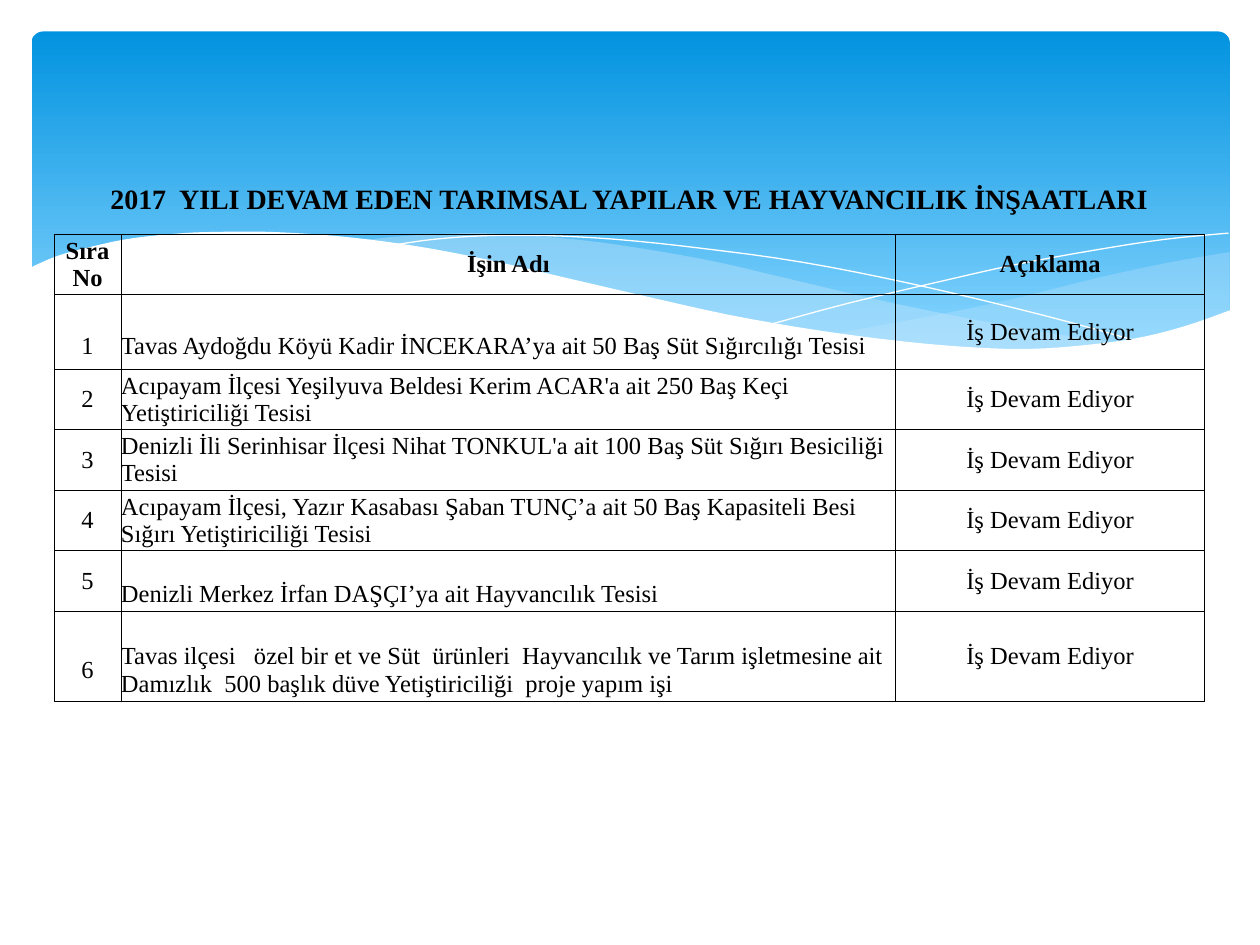
from pptx import Presentation
from pptx.dml.color import RGBColor
from pptx.enum.shapes import MSO_SHAPE
from pptx.enum.text import MSO_ANCHOR, PP_ALIGN
from pptx.oxml.ns import qn
from pptx.util import Inches, Pt
from lxml.etree import SubElement

COLORS = {"top": "0293E0", "bottom": "83D3FE", "haze": "C6E7FC",
          "white": "FFFFFF", "black": "000000"}
FONT = "Times New Roman"
LINE_HEIGHT = 0.22

TITLE = "2017  YILI DEVAM EDEN TARIMSAL YAPILAR VE HAYVANCILIK İNŞAATLARI"
HEADERS = ["Sıra No", "İşin Adı", "Açıklama"]
STATUS = "İş Devam Ediyor"
PROJECTS = [
    "Tavas Aydoğdu Köyü Kadir İNCEKARA’ya ait 50 Baş Süt Sığırcılığı Tesisi",
    "Acıpayam İlçesi Yeşilyuva Beldesi Kerim ACAR'a ait 250 Baş Keçi Yetiştiriciliği Tesisi",
    "Denizli İli Serinhisar İlçesi Nihat TONKUL'a ait 100 Baş Süt Sığırı Besiciliği Tesisi",
    "Acıpayam İlçesi, Yazır Kasabası Şaban TUNÇ’a ait 50 Baş Kapasiteli Besi Sığırı Yetiştiriciliği Tesisi",
    "Denizli Merkez İrfan DAŞÇI’ya ait Hayvancılık Tesisi",
    "Tavas ilçesi   özel bir et ve Süt  ürünleri  Hayvancılık ve Tarım işletmesine "
    "ait Damızlık  500 başlık düve Yetiştiriciliği  proje yapım işi",
]
LOWERED = {(2, 0), (2, 1), (6, 1), (7, 0), (7, 1)}
COL_WIDTHS = [0.53, 6.15, 2.45]
ROW_HEIGHTS = [0.55, 0.48, 0.59, 0.48, 0.48, 0.48, 0.48, 0.72]

RIGHT_HAZE = [
    [(9.76, 2), (9.35, 2.07), (8.91, 2.16), (8.61, 2.23), (8.05, 2.37),
     (7.53, 2.48), (7.06, 2.57), (6.61, 2.65)],
    [(6.61, 2.65), (7.05, 2.71), (7.45, 2.75), (7.81, 2.77), (8.14, 2.78),
     (8.54, 2.76), (8.89, 2.72), (9.21, 2.65), (9.49, 2.57), (9.76, 2.47)],
]
LEFT_HAZE = [
    [(8.93, 2.73), (8.37, 2.65), (7.75, 2.54), (7.06, 2.4), (6.29, 2.22),
     (5.69, 2.08), (5.14, 1.98), (4.65, 1.91), (4.2, 1.87), (3.8, 1.85),
     (3.44, 1.86), (3.13, 1.88), (2.86, 1.91)],
    [(2.86, 1.91), (3.42, 1.99), (4.04, 2.11), (4.49, 2.22), (5.3, 2.4),
     (6.01, 2.55), (6.65, 2.66), (7.22, 2.74), (7.73, 2.77), (8.18, 2.78),
     (8.57, 2.77), (8.93, 2.73)],
]
FALLING_LINE = [[
    (3.09, 1.95), (3.44, 1.9), (3.87, 1.87), (4.33, 1.87), (4.89, 1.9),
    (5.56, 1.97), (6.36, 2.08), (7.27, 2.26), (8.31, 2.51), (9.07, 2.72)]]
RISING_LINE = [[
    (6.13, 2.57), (6.72, 2.41), (7.48, 2.23), (8.06, 2.1), (8.66, 1.99),
    (9.24, 1.9), (9.75, 1.85)]]
WHITE_WAVE = [
    [(9.77, 2.46), (9.4, 2.59), (8.99, 2.69), (8.5, 2.75), (8.09, 2.77),
     (7.61, 2.75), (7.08, 2.7), (6.48, 2.62), (5.79, 2.5), (5.03, 2.33),
     (4.47, 2.2), (3.91, 2.07), (3.4, 1.97), (2.92, 1.9), (2.5, 1.86),
     (2.11, 1.84), (1.77, 1.84), (1.46, 1.85), (1.06, 1.89), (0.76, 1.95),
     (0.46, 2.03), (0.23, 2.13)],
    [(0.23, 3.29), (9.77, 3.29)],
]


def rgb(name):
    return RGBColor.from_string(COLORS[name])


def smooth(points, steps=4):
    if len(points) < 3:
        return points
    padded = [points[0], *points, points[-1]]
    curve = []
    for a, b, c, d in zip(padded, padded[1:], padded[2:], padded[3:]):
        for t in (i / steps for i in range(steps)):
            curve.append(tuple(
                (2 * q + (r - p) * t + (2 * p - 5 * q + 4 * r - s) * t ** 2
                 + (3 * q - p - 3 * r + s) * t ** 3) / 2
                for p, q, r, s in zip(a, b, c, d)))
    return curve + [points[-1]]


def add_curve(slide, edges, closed):
    points = [(Inches(x), Inches(y)) for edge in edges for x, y in smooth(edge)]
    builder = slide.shapes.build_freeform(*points[0])
    builder.add_line_segments(points[1:], close=closed)
    s = builder.convert_to_shape()
    s.shadow.inherit = False
    return s


def add_area(slide, edges, color, opacity=100):
    s = add_curve(slide, edges, True)
    s.fill.solid()
    s.fill.fore_color.rgb = rgb(color)
    s.line.fill.background()
    if opacity < 100:
        clr = s.fill._xPr.find(qn("a:solidFill"))[0]
        SubElement(clr, qn("a:alpha"), val=str(opacity * 1000))


def add_hairline(slide, edges):
    s = add_curve(slide, edges, False)
    s.fill.background()
    s.line.color.rgb = rgb("white")
    s.line.width = Pt(0)


def add_banner(slide):
    s = slide.shapes.add_shape(MSO_SHAPE.ROUNDED_RECTANGLE, Inches(0.25),
                               Inches(0.25), Inches(9.51), Inches(2.7))
    s.adjustments[0] = 0.034
    s.shadow.inherit = False
    s.line.fill.background()
    s.fill.gradient()
    s.fill.gradient_angle = 270
    stops = s.fill.gradient_stops
    for stop, position, color in zip(stops, (0, 0.9), ("top", "bottom")):
        stop.position = position
        stop.color.rgb = rgb(color)


def set_borders(cell, visible):
    tcPr = cell._tc.get_or_add_tcPr()
    for side in "LRTB":
        ln = SubElement(tcPr, qn(f"a:ln{side}"), w=str(Pt(0.5)))
        if side in visible:
            fill = SubElement(ln, qn("a:solidFill"))
            SubElement(fill, qn("a:srgbClr"), val=COLORS["black"])
        else:
            SubElement(ln, qn("a:noFill"))


def format_cell(cell, visible="LRTB", top=0):
    set_borders(cell, visible)
    cell.fill.background()
    cell.vertical_anchor = MSO_ANCHOR.MIDDLE
    cell.margin_left = cell.margin_right = cell.margin_bottom = 0
    cell.margin_top = Inches(top)


def write_cell(cell, text, size=14, bold=False, align=PP_ALIGN.CENTER):
    p = cell.text_frame.paragraphs[0]
    p.alignment = align
    r = p.add_run()
    r.text = text
    r.font.name = FONT
    r.font.size = Pt(size)
    r.font.bold = bold
    r.font.color.rgb = rgb("black")


def add_project_table(slide):
    table = slide.shapes.add_table(
        len(ROW_HEIGHTS), len(COL_WIDTHS), Inches(0.43), Inches(1.31),
        Inches(sum(COL_WIDTHS)), Inches(sum(ROW_HEIGHTS))).table
    table.first_row = table.horz_banding = False
    for col, width in zip(table.columns, COL_WIDTHS):
        col.width = Inches(width)
    for row, height in zip(table.rows, ROW_HEIGHTS):
        row.height = Inches(height)

    for cell in table.rows[0].cells:
        format_cell(cell, "B")
    table.cell(0, 0).merge(table.cell(0, 2))
    write_cell(table.cell(0, 0), TITLE, 16, True)

    rows = [HEADERS] + [[str(n), name, STATUS] for n, name in enumerate(PROJECTS, 1)]
    for i, texts in enumerate(rows, 1):
        for j, text in enumerate(texts):
            cell = table.cell(i, j)
            format_cell(cell, top=LINE_HEIGHT if (i, j) in LOWERED else 0)
            left = i > 1 and j == 1
            write_cell(cell, text, bold=i == 1,
                       align=PP_ALIGN.LEFT if left else PP_ALIGN.CENTER)


def main():
    prs = Presentation()
    prs.slide_width, prs.slide_height = Inches(10), Inches(7.5)
    slide = prs.slides.add_slide(prs.slide_layouts[6])
    add_banner(slide)
    add_area(slide, RIGHT_HAZE, "haze", 29)
    add_area(slide, LEFT_HAZE, "haze", 40)
    add_hairline(slide, FALLING_LINE)
    add_hairline(slide, RISING_LINE)
    add_area(slide, WHITE_WAVE, "white")
    add_project_table(slide)
    prs.save("out.pptx")


if __name__ == "__main__":
    main()
